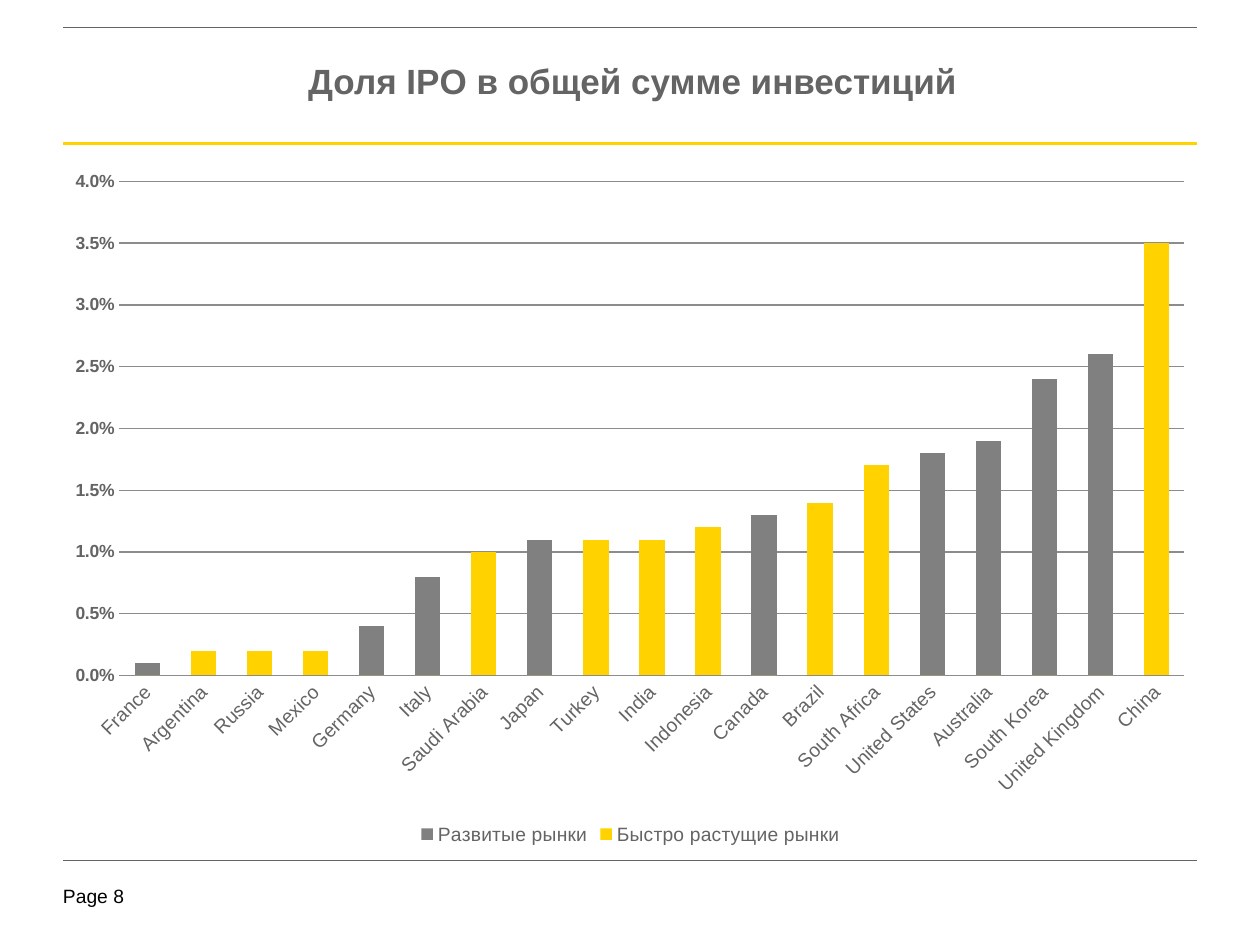
"""Build a slide with a column chart of the IPO share of total investment by country."""
import lxml.etree
import pptx
import pptx.chart.data
import pptx.dml.color
import pptx.enum.chart
import pptx.enum.shapes
import pptx.enum.text
import pptx.oxml
import pptx.oxml.ns
import pptx.util

Inches = pptx.util.Inches
Pt = pptx.util.Pt
RGBColor = pptx.dml.color.RGBColor

TEXT_GRAY = RGBColor(0x64, 0x64, 0x64)
BAR_GRAY = RGBColor(0x80, 0x80, 0x80)
GRID_GRAY = RGBColor(0x8C, 0x8C, 0x8C)
YELLOW = RGBColor(0xFF, 0xD2, 0x00)
BLACK = RGBColor(0x00, 0x00, 0x00)

DEVELOPED = "Развитые рынки"
GROWING = "Быстро растущие рынки"
MARKET_COLORS = {DEVELOPED: BAR_GRAY, GROWING: YELLOW}
SHARES = [
    ("France", 0.001, DEVELOPED),
    ("Argentina", 0.002, GROWING),
    ("Russia", 0.002, GROWING),
    ("Mexico", 0.002, GROWING),
    ("Germany", 0.004, DEVELOPED),
    ("Italy", 0.008, DEVELOPED),
    ("Saudi Arabia", 0.01, GROWING),
    ("Japan", 0.011, DEVELOPED),
    ("Turkey", 0.011, GROWING),
    ("India", 0.011, GROWING),
    ("Indonesia", 0.012, GROWING),
    ("Canada", 0.013, DEVELOPED),
    ("Brazil", 0.014, GROWING),
    ("South Africa", 0.017, GROWING),
    ("United States", 0.018, DEVELOPED),
    ("Australia", 0.019, DEVELOPED),
    ("South Korea", 0.024, DEVELOPED),
    ("United Kingdom", 0.026, DEVELOPED),
    ("China", 0.035, GROWING),
]


def set_attributes(target, values):
    for name, value in values.items():
        setattr(target, name, value)


def set_font(font, size, color, bold=False):
    set_attributes(font, {"name": "Arial", "size": Pt(size), "bold": bold})
    font.color.rgb = color


presentation = pptx.Presentation()
set_attributes(presentation, {"slide_width": Inches(10), "slide_height": Inches(7.5)})
slide = presentation.slides.add_slide(presentation.slide_layouts[5])

page_box = slide.shapes.add_textbox(Inches(0.5), Inches(7.02), Inches(0.73), Inches(0.22))
set_attributes(page_box.text_frame, {
    "text": "Page 8", "word_wrap": False,
    "margin_left": 0, "margin_top": 0, "margin_right": 0, "margin_bottom": 0,
})
set_font(page_box.text_frame.paragraphs[0].font, 11, BLACK)

for top, color, width in [(1.14, YELLOW, 1.5), (6.83, TEXT_GRAY, 0.25), (0.22, TEXT_GRAY, 0.5)]:
    rule = slide.shapes.add_connector(
        pptx.enum.shapes.MSO_CONNECTOR.STRAIGHT,
        Inches(0.5), Inches(top), Inches(9.5), Inches(top))
    rule.line.color.rgb = color
    rule.line.width = Pt(width)
    lxml.etree.SubElement(rule._element.spPr, pptx.oxml.ns.qn("a:effectLst"))

chart_data = pptx.chart.data.CategoryChartData(number_format="0.0%")
chart_data.categories = [country for country, share, market in SHARES]
for name in MARKET_COLORS:
    chart_data.add_series(name, [share if market == name else 0 for country, share, market in SHARES])
chart = slide.shapes.add_chart(
    pptx.enum.chart.XL_CHART_TYPE.COLUMN_CLUSTERED,
    Inches(0.42), Inches(1.25), Inches(9.17), Inches(5.5), chart_data).chart
set_font(chart.font, 18, TEXT_GRAY)
set_attributes(chart, {"has_title": False, "has_legend": True})
set_attributes(chart.legend, {
    "position": pptx.enum.chart.XL_LEGEND_POSITION.BOTTOM, "include_in_layout": False,
})
set_font(chart.legend.font, 11, TEXT_GRAY)

plot = chart.plots[0]
set_attributes(plot, {"gap_width": 122, "overlap": 100, "vary_by_categories": False})
for series in plot.series:
    series.format.fill.solid()
    series.format.fill.fore_color.rgb = MARKET_COLORS[series.name]

category_axis = chart.category_axis
value_axis = chart.value_axis
for axis in (category_axis, value_axis):
    set_attributes(axis, {
        "major_tick_mark": pptx.enum.chart.XL_TICK_MARK.NONE,
        "minor_tick_mark": pptx.enum.chart.XL_TICK_MARK.NONE,
    })
set_attributes(value_axis, {
    "minimum_scale": 0, "maximum_scale": 0.04, "major_unit": 0.005, "has_major_gridlines": True,
})
set_attributes(value_axis.tick_labels, {"number_format": "0.0%", "number_format_is_linked": False})
set_font(category_axis.tick_labels.font, 11, TEXT_GRAY)
set_font(value_axis.tick_labels.font, 10, TEXT_GRAY, bold=True)
category_axis._element.txPr.bodyPr.set("rot", "-2700000")
value_axis.format.line.fill.background()
for line in (category_axis.format.line, value_axis.major_gridlines.format.line):
    line.color.rgb = GRID_GRAY
    line.width = Pt(0.75)

plot_area = chart._chartSpace.chart.plotArea
for layout in plot_area.findall(pptx.oxml.ns.qn("c:layout")):
    plot_area.remove(layout)
plot_area.insert(0, pptx.oxml.parse_xml(
    f'<c:layout {pptx.oxml.ns.nsdecls("c")}><c:manualLayout><c:layoutTarget val="inner"/>'
    '<c:xMode val="edge"/><c:yMode val="edge"/><c:x val="0.0575"/><c:y val="0.0345"/>'
    '<c:w val="0.922"/><c:h val="0.713"/></c:manualLayout></c:layout>'))

title = slide.shapes.title
set_attributes(title, {
    "left": Inches(2.17), "top": Inches(0.1), "width": Inches(5.7), "height": Inches(1.08),
})
set_attributes(title.text_frame, {
    "text": "Доля IPO в общей сумме инвестиций", "word_wrap": False,
    "vertical_anchor": pptx.enum.text.MSO_ANCHOR.MIDDLE,
    "auto_size": pptx.enum.text.MSO_AUTO_SIZE.NONE,
})
title_paragraph = title.text_frame.paragraphs[0]
title_paragraph.alignment = pptx.enum.text.PP_ALIGN.CENTER
set_font(title_paragraph.font, 20, TEXT_GRAY, bold=True)

presentation.save("out.pptx")
